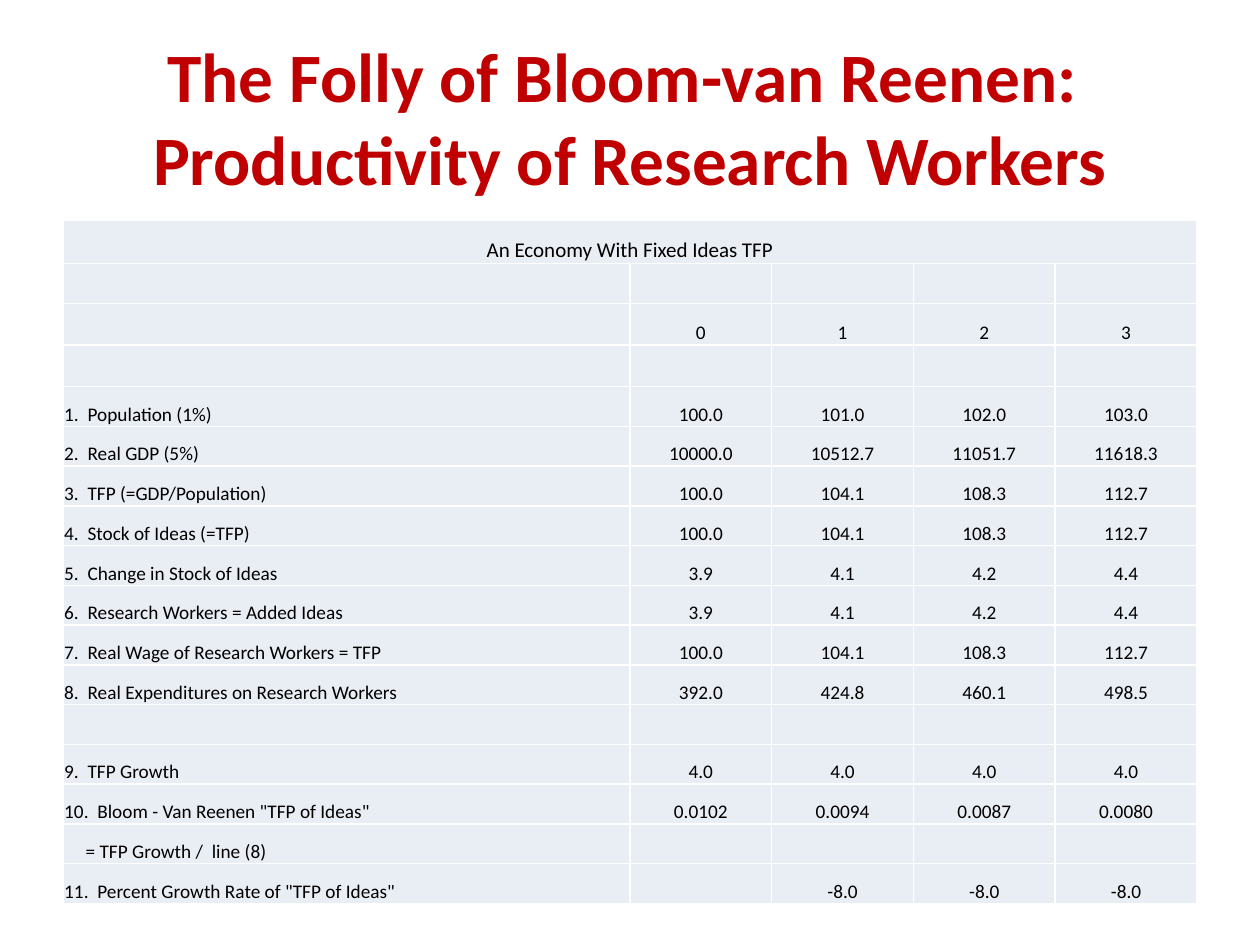
from lxml import etree
from pptx import Presentation
from pptx.dml.color import RGBColor
from pptx.enum.text import MSO_ANCHOR, MSO_AUTO_SIZE, PP_ALIGN
from pptx.oxml.ns import qn
from pptx.util import Inches, Pt

FONT = "Calibri"
RED, BLACK, WHITE, PALE = "C00000", "000000", "FFFFFF", "E9EDF4"
CENTER, LEFT = PP_ALIGN.CENTER, PP_ALIGN.LEFT
MIDDLE, BOTTOM = MSO_ANCHOR.MIDDLE, MSO_ANCHOR.BOTTOM
NO_AUTOFIT = MSO_AUTO_SIZE.NONE
TITLE_ONLY = 5

TITLE = "The Folly of Bloom-van Reenen: \vProductivity of Research Workers"
CAPTION = "An Economy With Fixed Ideas TFP"
CONTINUATION = "= TFP Growth /  line (8)"
TFP = ["100.0", "104.1", "108.3", "112.7"]
IDEAS = ["3.9", "4.1", "4.2", "4.4"]
BLANK = [""] * 5
ROWS = [
    [CAPTION, "", "", "", ""],
    BLANK,
    ["", "0", "1", "2", "3"],
    BLANK,
    ["1.  Population (1%)", "100.0", "101.0", "102.0", "103.0"],
    ["2.  Real GDP (5%)", "10000.0", "10512.7", "11051.7", "11618.3"],
    ["3.  TFP (=GDP/Population)", *TFP],
    ["4.  Stock of Ideas (=TFP)", *TFP],
    ["5.  Change in Stock of Ideas", *IDEAS],
    ["6.  Research Workers = Added Ideas", *IDEAS],
    ["7.  Real Wage of Research Workers = TFP", *TFP],
    ["8.  Real Expenditures on Research Workers", "392.0", "424.8", "460.1", "498.5"],
    BLANK,
    ["9.  TFP Growth", "4.0", "4.0", "4.0", "4.0"],
    ['10.  Bloom - Van Reenen "TFP of Ideas"', "0.0102", "0.0094", "0.0087", "0.0080"],
    [CONTINUATION, "", "", "", ""],
    ['11.  Percent Growth Rate of "TFP of Ideas"', "", "-8.0", "-8.0", "-8.0"],
]
HEAD_HEIGHTS = [0.34, 0.32, 0.33, 0.33]
LABEL_WIDTH = 4.5


def rgb(color):
    return RGBColor.from_string(color)


def format_runs(para, size, color, bold=False):
    for span in para.runs:
        span.font.name = FONT
        span.font.size = Pt(size)
        span.font.bold = bold
        span.font.color.rgb = rgb(color)


def add_title(page, left, top, width, height):
    title = page.shapes.title
    title.left, title.top = Inches(left), Inches(top)
    title.width, title.height = Inches(width), Inches(height)
    frame = title.text_frame
    frame.text = TITLE
    frame.word_wrap = True
    frame.auto_size = NO_AUTOFIT
    frame.vertical_anchor = MIDDLE
    para = frame.paragraphs[0]
    para.alignment = CENTER
    format_runs(para, 39.6, RED, bold=True)


def set_borders(cell, color, width):
    properties = cell._tc.get_or_add_tcPr()
    for index, side in enumerate(("a:lnL", "a:lnR", "a:lnT", "a:lnB")):
        line = etree.Element(qn(side), w=str(Pt(width)))
        fill = etree.SubElement(line, qn("a:solidFill"))
        etree.SubElement(fill, qn("a:srgbClr"), val=color)
        properties.insert(index, line)


def fill_cell(cell, text, size, alignment):
    cell.fill.solid()
    cell.fill.fore_color.rgb = rgb(PALE)
    set_borders(cell, WHITE, 1)
    cell.vertical_anchor = BOTTOM
    cell.margin_left = Inches(0.18 if text == CONTINUATION else 0.01)
    cell.margin_right = cell.margin_top = Inches(0.01)
    cell.margin_bottom = 0
    cell.text_frame.text = text
    para = cell.text_frame.paragraphs[0]
    para.alignment = alignment
    format_runs(para, size, BLACK)


def add_data_table(page, left, top, width, height):
    row_count, column_count = len(ROWS), len(ROWS[0])
    table = page.shapes.add_table(
        row_count, column_count,
        Inches(left), Inches(top), Inches(width), Inches(height),
    ).table
    table.first_row = False
    table.horz_banding = False

    value_width = (width - LABEL_WIDTH) / (column_count - 1)
    for index, column in enumerate(table.columns):
        column.width = Inches(value_width if index else LABEL_WIDTH)

    body_count = row_count - len(HEAD_HEIGHTS)
    body_height = (height - sum(HEAD_HEIGHTS)) / body_count
    for row, row_height in zip(table.rows, HEAD_HEIGHTS + [body_height] * body_count):
        row.height = Inches(row_height)

    table.cell(0, 0).merge(table.cell(0, column_count - 1))
    for row_index, values in enumerate(ROWS):
        for column_index, text in enumerate(values):
            is_caption = row_index == 0
            fill_cell(
                table.cell(row_index, column_index),
                text,
                12 if is_caption else 11,
                CENTER if is_caption or column_index else LEFT,
            )


def main():
    deck = Presentation()
    deck.slide_width, deck.slide_height = Inches(10), Inches(7.5)
    page = deck.slides.add_slide(deck.slide_layouts[TITLE_ONLY])
    add_title(page, 0.5, 0.3, 9, 1.25)
    add_data_table(page, 0.5, 1.75, 9, 5.42)
    deck.save("out.pptx")


if __name__ == "__main__":
    main()
